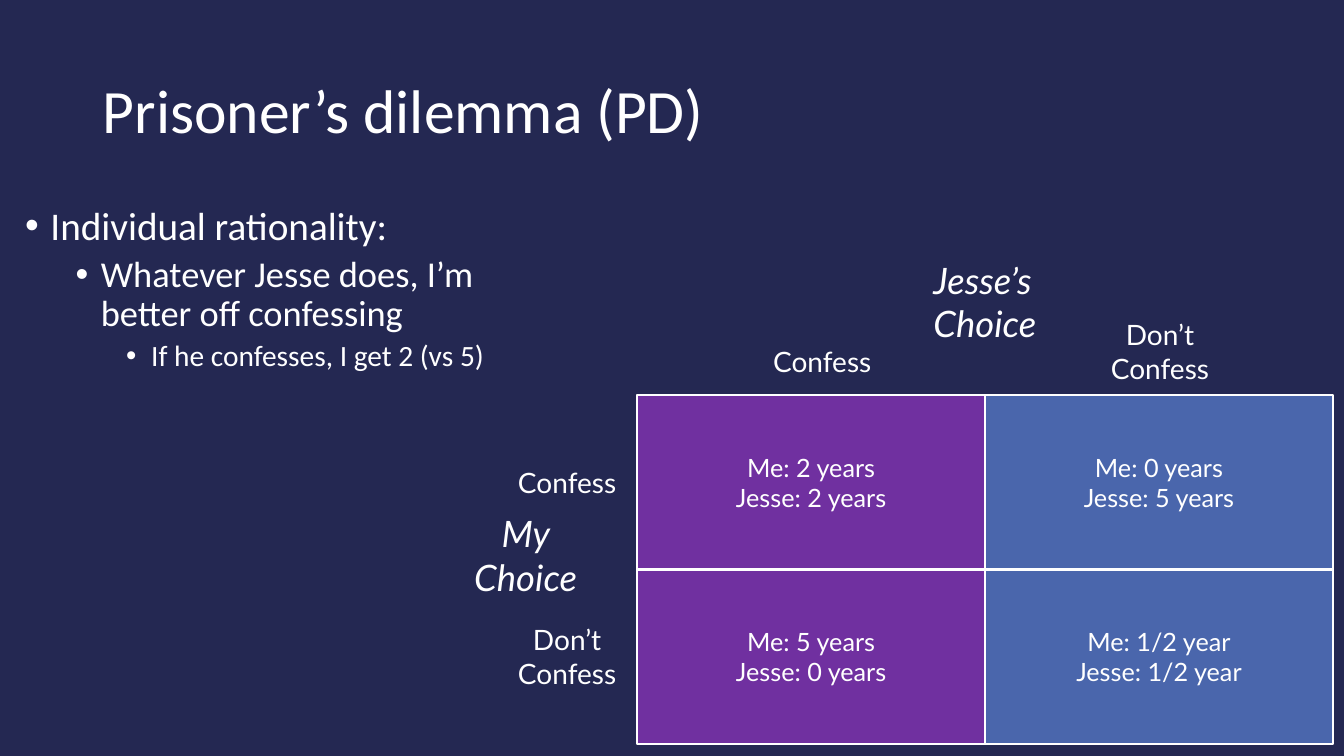
from pptx import Presentation
from pptx.dml.color import RGBColor as RGB
from pptx.enum.shapes import MSO_SHAPE as SHAPE
from pptx.enum.text import MSO_ANCHOR as ANCHOR, MSO_AUTO_SIZE as FIT, PP_ALIGN as ALIGN
from pptx.util import Inches, Pt
from lxml.etree import SubElement

COLORS = {"navy": "242852", "white": "FFFFFF", "purple": "7030A0", "blue": "4A66AC"}
NS = "{http://schemas.openxmlformats.org/drawingml/2006/main}"
LEFT, TOP, WIDE, HIGH = 6.32, 3.92, 3.45, 1.73

YEARS = [
    [("2 years", "2 years"), ("0 years", "5 years")],
    [("5 years", "0 years"), ("1/2 year", "1/2 year")],
]
POINTS = [
    ("Individual rationality:", 28, 10),
    ("Whatever Jesse does, I’m better off confessing", 26, 5),
    ("If he confesses, I get 2 (vs 5)", 21, 5),
]
LABELS = [
    ("Confess", 5.02, 4.57, 1.21, 0.44, 20),
    ("Don’t\nConfess", 5.02, 6.13, 1.21, 0.77, 20),
    ("Confess", 7.55, 3.37, 1.21, 0.44, 20),
    ("Don’t\nConfess", 10.9, 3.1, 1.21, 0.77, 20),
]


def color(name):
    return RGB.from_string(COLORS[name])


def style(para, size, face="Lato", align=ALIGN.CENTER, slant=False):
    para.alignment = align
    for run in para.runs:
        font = run.font
        font.name, font.size, font.italic = face, Pt(size), slant
        font.color.rgb = color("white")


def place(shape, left, top, wide, high):
    shape.left, shape.top = Inches(left), Inches(top)
    shape.width, shape.height = Inches(wide), Inches(high)


def add_title(slide, text):
    title = slide.shapes.title
    place(title, 0.92, 0.4, 11.5, 1.45)
    frame = title.text_frame
    frame.text = text
    frame.auto_size = FIT.NONE
    frame.vertical_anchor = ANCHOR.MIDDLE
    frame.paragraphs[0].line_spacing = 0.9
    style(frame.paragraphs[0], 44, "Calibri", ALIGN.LEFT)


def add_list(slide):
    body = slide.placeholders[1]
    place(body, 0.15, 2, 4.77, 5.38)
    frame = body.text_frame
    frame.text = "\n".join(text for text, _, _ in POINTS)
    frame.auto_size = FIT.NONE
    for level, (para, point) in enumerate(zip(frame.paragraphs, POINTS)):
        _, size, gap = point
        para.level = level
        para.line_spacing = 0.9
        para.space_before = Pt(gap)
        style(para, size, "Calibri", ALIGN.LEFT)
        props = para._p.get_or_add_pPr()
        props.set("marL", str(Inches(0.25 + 0.5 * level)))
        props.set("indent", str(Inches(-0.25)))
        SubElement(props, NS + "buFont", typeface="Arial")
        SubElement(props, NS + "buChar", char="•")


def add_cell(slide, row, col, mine, other):
    cell = slide.shapes.add_shape(
        SHAPE.RECTANGLE, Inches(LEFT + col * WIDE), Inches(TOP + row * HIGH),
        Inches(WIDE), Inches(HIGH))
    cell.shadow.inherit = False
    cell.fill.solid()
    cell.fill.fore_color.rgb = color(("purple", "blue")[col])
    cell.line.color.rgb = color("white")
    cell.line.width = Pt(1.5)
    frame = cell.text_frame
    frame.text = f"Me: {mine}\nJesse: {other}"
    frame.vertical_anchor = ANCHOR.MIDDLE
    for para in frame.paragraphs:
        style(para, 18)


def add_label(slide, text, left, top, wide, high, size, align=ALIGN.CENTER, slant=False):
    box = slide.shapes.add_textbox(Inches(left), Inches(top), Inches(wide), Inches(high))
    frame = box.text_frame
    frame.text = text
    frame.word_wrap = False
    frame.auto_size = FIT.SHAPE_TO_FIT_TEXT
    for para in frame.paragraphs:
        style(para, size, align=align, slant=slant)


def main():
    deck = Presentation()
    deck.slide_width, deck.slide_height = Inches(13.33), Inches(7.5)
    slide = deck.slides.add_slide(deck.slide_layouts[1])
    slide.background.fill.solid()
    slide.background.fill.fore_color.rgb = color("navy")
    add_title(slide, "Prisoner’s dilemma (PD)")
    add_list(slide)
    for row, cells in enumerate(YEARS):
        for col, (mine, other) in enumerate(cells):
            add_cell(slide, row, col, mine, other)
    for label in LABELS:
        add_label(slide, *label)
    add_label(slide, "My\nChoice", 4.55, 5.02, 1.33, 0.98, 26, slant=True)
    add_label(slide, "Jesse’s\nChoice", 9.16, 2.51, 1.33, 0.98, 26, ALIGN.LEFT, True)
    deck.save("out.pptx")


if __name__ == "__main__":
    main()
